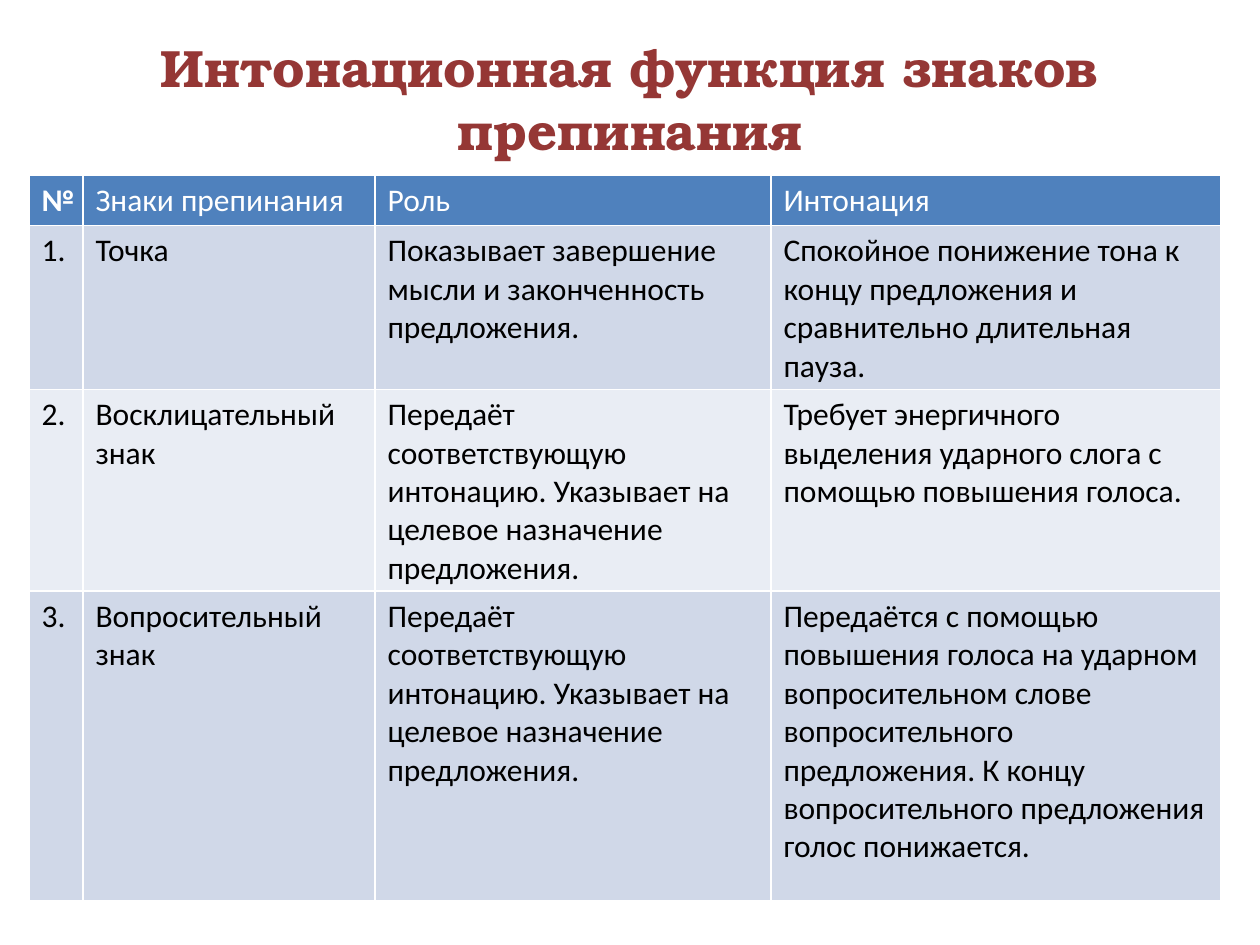
from pptx import Presentation, util as u
from pptx.dml.color import RGBColor
from pptx.enum import text

PX = u.Inches(1) / 126
WHITE = RGBColor(0xFF, 0xFF, 0xFF)
BLACK = RGBColor(0x00, 0x00, 0x00)
MAROON = RGBColor(0x95, 0x37, 0x35)
HEADER_BLUE = RGBColor(0x4F, 0x81, 0xBD)
BANDS = (RGBColor(0xE9, 0xED, 0xF4), RGBColor(0xD0, 0xD8, 0xE8))

COLUMN_WIDTHS = (54, 292, 396, 450)
ROW_HEIGHTS = (50, 161, 199, 310)
PURPOSE = "Передаёт соответствующую интонацию. Указывает на целевое назначение предложения."
ROWS = (
    ("№", "Знаки препинания", "Роль", "Интонация"),
    ("1.", "Точка", "Показывает завершение мысли и законченность предложения.",
     "Спокойное понижение тона к концу предложения и сравнительно длительная пауза."),
    ("2.", "Восклицательный знак", PURPOSE,
     "Требует энергичного выделения ударного слога с помощью повышения голоса."),
    ("3.", "Вопросительный знак", PURPOSE,
     "Передаётся с помощью повышения голоса на ударном вопросительном слове "
     "вопросительного предложения. К концу вопросительного предложения голос понижается."),
)


def px(length):
    return u.Emu(round(length * PX))


def write_text(frame, content, size=18, font="Calibri", color=BLACK, bold=False,
               align=text.PP_ALIGN.LEFT):
    paragraph = frame.paragraphs[0]
    paragraph.alignment = align
    run = paragraph.add_run()
    run.text = content
    run.font.size = u.Pt(size)
    run.font.name = font
    run.font.bold = bold
    run.font.color.rgb = color


def add_title(slide, content, left, top, width, height):
    shape = slide.shapes.add_textbox(px(left), px(top), px(width), px(height))
    frame = shape.text_frame
    frame.word_wrap = True
    frame.vertical_anchor = text.MSO_ANCHOR.MIDDLE
    write_text(frame, content, size=30, font="TeX Gyre Bonum", color=MAROON,
               bold=True, align=text.PP_ALIGN.CENTER)


def add_punctuation_table(slide, left, top):
    shape = slide.shapes.add_table(len(ROWS), len(COLUMN_WIDTHS), px(left), px(top),
                                   px(sum(COLUMN_WIDTHS)), px(sum(ROW_HEIGHTS)))
    table = shape.table
    for column, width in zip(table.columns, COLUMN_WIDTHS):
        column.width = px(width)
    for row_index, (row, height) in enumerate(zip(table.rows, ROW_HEIGHTS)):
        row.height = px(height)
        is_header = row_index == 0
        for cell, content in zip(row.cells, ROWS[row_index]):
            cell.fill.solid()
            cell.fill.fore_color.rgb = HEADER_BLUE if is_header else BANDS[row_index % 2]
            write_text(cell.text_frame, content, color=WHITE if is_header else BLACK,
                       bold=content == "№")


def main():
    presentation = Presentation()
    presentation.slide_width = px(1260)
    presentation.slide_height = px(945)
    slide = presentation.slides.add_slide(presentation.slide_layouts[6])
    add_title(slide, "Интонационная функция знаков препинания", 63, 0, 1134, 195)
    add_punctuation_table(slide, 29, 175)
    presentation.save("out.pptx")


if __name__ == "__main__":
    main()
